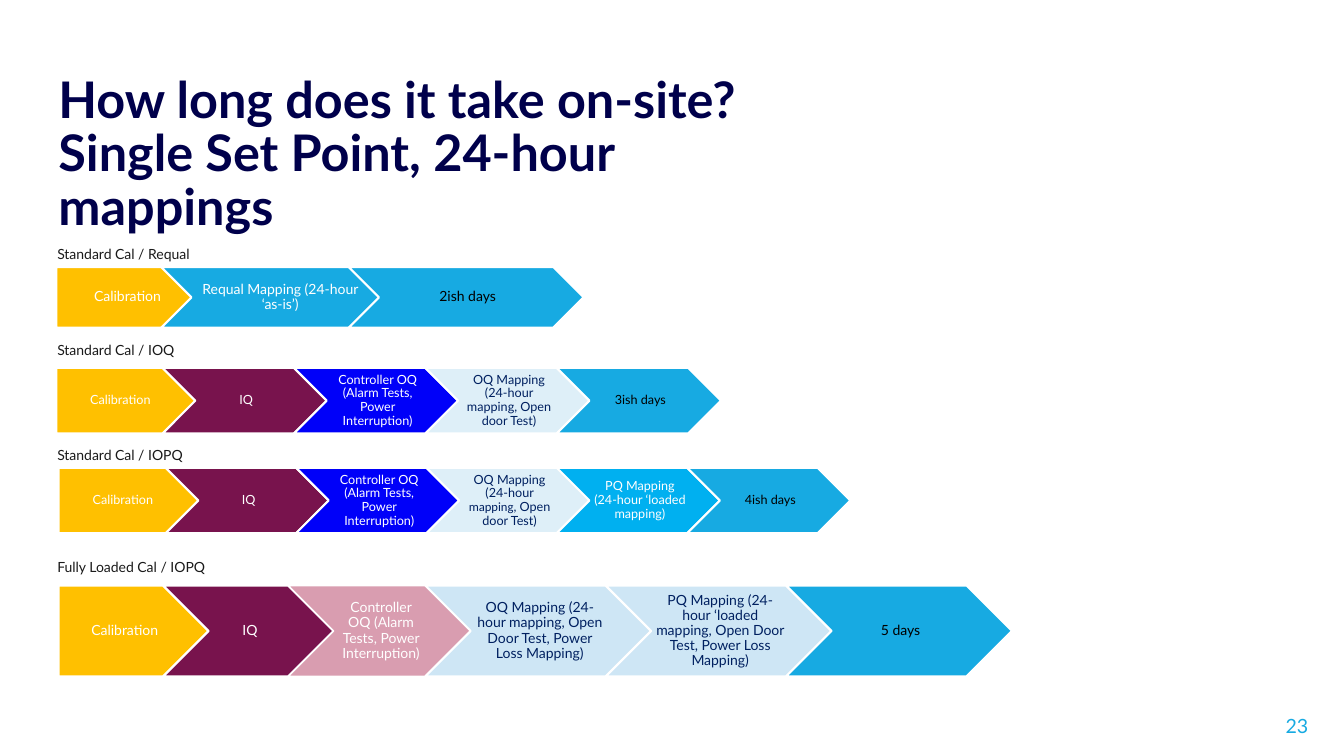
import dataclasses

import pptx
import pptx.dml.color
import pptx.enum.shapes
import pptx.enum.text
import pptx.util

SHAPES = pptx.enum.shapes.MSO_SHAPE
ALIGN = pptx.enum.text.PP_ALIGN
ANCHOR = pptx.enum.text.MSO_ANCHOR
COLUMNS, ROWS = 40, 22.5
CELL = 1 / 3  # inches per grid cell


@dataclasses.dataclass(frozen=True)
class Theme:
    font: str = "Lato"
    second_font: str = "Calibri"
    navy: str = "00004B"
    ink: str = "1A1A1A"
    black: str = "000000"
    white: str = "FFFFFF"
    deep_blue: str = "002060"
    sky: str = "17AAE2"
    bright_sky: str = "00B0F0"
    amber: str = "FFC000"
    plum: str = "78134D"
    blue: str = "0000F9"
    ice: str = "DEEFF8"
    pale_blue: str = "CEE6F5"
    rose: str = "D99DB0"
    title_size: int = 36
    number_size: int = 14
    label_size: int = 10
    small_size: int = 9
    outline: float = 1.5
    thin_outline: float = 1


THEME = Theme()


@dataclasses.dataclass(frozen=True)
class Step:
    text: str
    width: float
    fill: str
    color: str = THEME.white
    outline: float = THEME.outline
    second_font_word: str = ""


@dataclasses.dataclass(frozen=True)
class Process:
    label: str
    label_top: float
    left: float
    top: float
    height: float
    overlap: float
    size: int
    steps: tuple


def grid(*cells):
    return [pptx.util.Inches(cell * CELL) for cell in cells]


def rgb(value):
    return pptx.dml.color.RGBColor.from_string(value)


def apply(target, values):
    for name, value in values.items():
        setattr(target, name, value)


def write(box, text, size, color, frame=None, para_format=None, bold=False, odd_word=""):
    apply(box.text_frame, {"word_wrap": True, **(frame or {})})
    para = box.text_frame.paragraphs[0]
    apply(para, para_format or {})
    before, word, after = text.partition(odd_word) if odd_word else (text, "", "")
    for part, font in ((before, THEME.font), (word, THEME.second_font), (after, THEME.font)):
        if part:
            for index, line in enumerate(part.split("\n")):
                if index:
                    para.add_line_break()
                span = para.add_run()
                span.text = line
                apply(span.font, {"name": font, "size": pptx.util.Pt(size), "bold": bold})
                span.font.color.rgb = rgb(color)


def insets(left, top, right, bottom):
    sides = zip(("left", "top", "right", "bottom"), (left, top, right, bottom))
    return {f"margin_{side}": pptx.util.Inches(value) for side, value in sides}


def add_title(page, box):
    write(page.shapes.add_textbox(*grid(*box)),
          "How long does it take on-site? \nSingle Set Point, 24-hour mappings",
          THEME.title_size, THEME.navy, insets(0, 0, 0, 0),
          {"line_spacing": pptx.util.Pt(38)}, bold=True)


def add_page_number(page, box):
    write(page.shapes.add_textbox(*grid(*box)), "23", THEME.number_size, THEME.sky,
          insets(0.1, 0.05, 0, 0.05),
          {"alignment": ALIGN.RIGHT, "line_spacing": pptx.util.Pt(16)})


def add_process(page, process):
    # Heading above the arrows
    label = page.shapes.add_textbox(*grid(1.41, process.label_top, 5.82, 0.81))
    write(label, process.label, THEME.label_size, THEME.ink)

    # Each arrow starts a fixed overlap before the end of the previous one
    left = process.left
    for index, step in enumerate(process.steps):
        kind = SHAPES.CHEVRON if index else SHAPES.PENTAGON
        arrow = page.shapes.add_shape(kind, *grid(left, process.top, step.width, process.height))
        arrow.shadow.inherit = False
        arrow.fill.solid()
        arrow.fill.fore_color.rgb = rgb(step.fill)
        arrow.line.color.rgb = rgb(THEME.white)
        arrow.line.width = pptx.util.Pt(step.outline)
        write(arrow, step.text, process.size, step.color,
              {"vertical_anchor": ANCHOR.MIDDLE,
               **insets(0.04 if index else 0.06, 0.03, 0.01, 0.03)},
              {"alignment": ALIGN.CENTER, "line_spacing": 0.9},
              odd_word=step.second_font_word)
        left += step.width - process.overlap


CONTROLLER = "Controller OQ (Alarm Tests, Power Interruption)"
OPEN_DOOR = "OQ Mapping (24-hour mapping, Open door Test)"


def qualification_steps(first, width, *last_steps, odd_word=""):
    return (
        Step("Calibration", first, THEME.amber),
        Step("IQ", width, THEME.plum),
        Step(CONTROLLER, width, THEME.blue),
        Step(OPEN_DOOR, width, THEME.ice, THEME.deep_blue, second_font_word=odd_word),
        *(Step(text, width, fill, color) for text, fill, color in last_steps),
    )


PROCESSES = (
    Process("Standard Cal / Requal", 7.17, 1.68, 7.95, 1.8, 1.41, THEME.label_size, (
        Step("Calibration", 4.53, THEME.amber),
        Step("Requal Mapping (24-hour ‘as-is’)", 6.99, THEME.sky),
        Step("2ish days", 6.99, THEME.sky, THEME.black),
    )),
    Process("Standard Cal / IOQ", 10.02, 1.68, 10.95, 1.95, 0.98, THEME.small_size,
            qualification_steps(4.14, 4.89, ("3ish days", THEME.sky, THEME.black))),
    Process("Standard Cal / IOPQ", 13.14, 1.74, 13.92, 1.95, 0.98, THEME.small_size,
            qualification_steps(
                4.17, 4.86,
                ("PQ Mapping (24-hour ‘loaded mapping)", THEME.bright_sky, THEME.white),
                ("4ish days", THEME.sky, THEME.black), odd_word="mapping")),
    Process("Fully Loaded Cal / IOPQ", 16.47, 1.74, 17.43, 2.7, 1.35, THEME.label_size, (
        Step("Calibration", 4.47, THEME.amber),
        Step("IQ", 5.07, THEME.plum),
        Step(CONTROLLER, 5.43, THEME.rose, outline=THEME.thin_outline),
        Step("OQ Mapping (24-hour mapping, Open Door Test, Power Loss Mapping)",
             6.72, THEME.pale_blue, THEME.deep_blue),
        Step("PQ Mapping (24-hour ‘loaded mapping, Open Door Test, Power Loss Mapping)",
             6.72, THEME.pale_blue, THEME.deep_blue),
        Step("5 days", 6.72, THEME.sky, THEME.black),
    )),
)


def main():
    deck = pptx.Presentation()
    deck.slide_width, deck.slide_height = grid(COLUMNS, ROWS)
    page = deck.slides.add_slide(deck.slide_layouts[6])
    add_page_number(page, (36.81, 21.12, 2.13, 0.99))
    add_title(page, (1.74, 2.25, 22.83, 2.31))
    for process in PROCESSES:
        add_process(page, process)
    deck.save("out.pptx")


if __name__ == "__main__":
    main()
